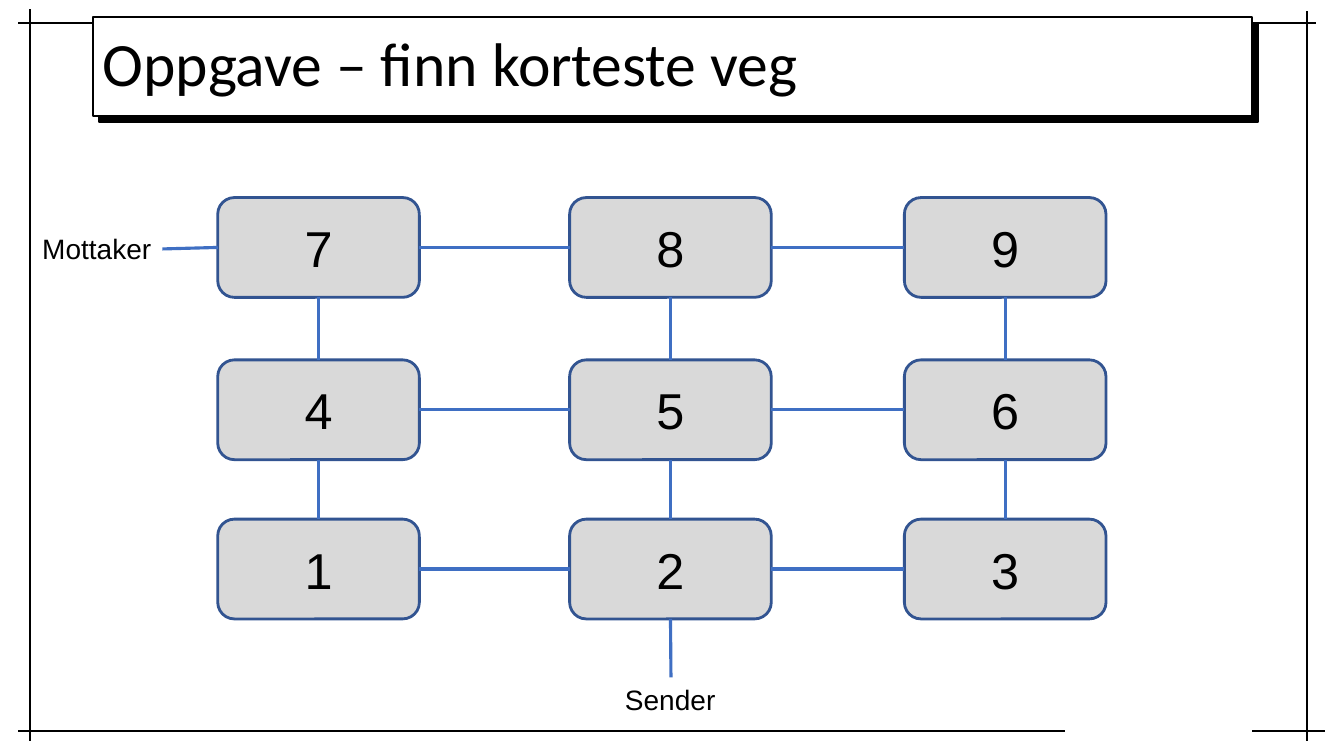
from lxml.etree import SubElement
from pptx import Presentation
from pptx.dml.color import RGBColor
from pptx.enum.shapes import MSO_CONNECTOR as Connector, MSO_SHAPE as Shape
from pptx.enum.text import MSO_ANCHOR as Anchor, MSO_AUTO_SIZE as AutoSize, PP_ALIGN as Align
from pptx.oxml.ns import qn
from pptx.util import Emu, Inches, Pt

COLORS = {
    "black": "000000",
    "white": "FFFFFF",
    "node": "D9D9D9",
    "node_edge": "325491",
    "link": "3F6FC3",
}
TOP, LEFT, BOTTOM, RIGHT = range(4)

# Node grid
COLUMNS = (2.16, 5.65, 8.97)
ROWS = (1.96, 3.57, 5.15)
NODE_SIZE = (2, 0.99)

# Frame lines: x1, y1, x2, y2
FRAME = (
    (0.18, 0.23, 13.05, 0.23),
    (0.18, 7.25, 10.56, 7.25),
    (0.3, 7.35, 0.3, 0.09),
    (12.96, 7.35, 12.96, 0.11),
    (12.42, 7.25, 13.14, 7.25),
)


def color(name):
    return RGBColor.from_string(COLORS[name])


def write(shape, text, size, font="Arial", **paragraph_format):
    para = shape.text_frame.paragraphs[0]
    for name, value in paragraph_format.items():
        setattr(para, name, value)
    span = para.add_run()
    span.text = text
    for name, value in {"name": font, "size": Pt(size)}.items():
        setattr(span.font, name, value)
    span.font.color.rgb = color("black")


def add_box(page, kind, area, fill, edge, width):
    box = page.shapes.add_shape(kind, *map(Inches, area))
    box.shadow.inherit = False
    box.fill.solid()
    box.fill.fore_color.rgb = color(fill)
    box.line.color.rgb = color(edge)
    box.line.width = Pt(width)
    box.text_frame.word_wrap = True
    box.text_frame.vertical_anchor = Anchor.MIDDLE
    return box


def add_line(page, points, name, width):
    line = page.shapes.add_connector(Connector.STRAIGHT, *map(Inches, points))
    line.line.color.rgb = color(name)
    line.line.width = Pt(width)
    SubElement(line._element.spPr, qn("a:effectLst"))
    return line


def join(page, start, start_side, end, end_side):
    line = add_line(page, (0, 0, 0, 0), "link", 2.25)
    line.begin_connect(start, start_side)
    line.end_connect(end, end_side)


def add_title(page, text):
    box = add_box(page, Shape.RECTANGLE, (0.92, 0.17, 11.5, 0.98), "white", "black", 1.5)
    write(box, text, 44, "Calibri", alignment=Align.LEFT, line_spacing=0.9)
    # Hard shadow down to the right
    effects = box._element.spPr.find(qn("a:effectLst"))
    shadow = SubElement(effects, qn("a:outerShdw"), blurRad="0", dist=str(Pt(6)),
                        dir=str(45 * 60000), algn="ctr", rotWithShape="0")
    SubElement(shadow, qn("a:srgbClr"), val=COLORS["black"])


def add_node(page, left, top, number):
    node = add_box(page, Shape.ROUNDED_RECTANGLE, (left, top, *NODE_SIZE),
                   "node", "node_edge", 2)
    write(node, str(number), 36, alignment=Align.CENTER)
    return node


def add_label(page, text, area):
    label = page.shapes.add_textbox(*map(Inches, area))
    label.text_frame.word_wrap = False
    label.text_frame.auto_size = AutoSize.SHAPE_TO_FIT_TEXT
    write(label, text, 20)
    return label


def add_network(page):
    # Numbers rise from the bottom row upwards
    grid = [[add_node(page, left, top, 7 - 3 * row + column)
             for column, left in enumerate(COLUMNS)]
            for row, top in enumerate(ROWS)]

    # Links between neighbours
    for nodes in grid:
        for node, neighbour in zip(nodes, nodes[1:]):
            join(page, node, RIGHT, neighbour, LEFT)
    for upper, lower in zip(grid, grid[1:]):
        for node, below in zip(upper, lower):
            join(page, below, TOP, node, BOTTOM)

    # End points of the route
    sender = add_label(page, "Sender", (6.1, 6.72, 1.11, 0.44))
    receiver = add_label(page, "Mottaker", (0.32, 2.25, 1.29, 0.44))
    join(page, sender, TOP, grid[2][1], BOTTOM)
    join(page, grid[0][0], LEFT, receiver, RIGHT)


def main():
    deck = Presentation()
    deck.slide_width, deck.slide_height = Inches(13.33), Inches(7.5)
    page = deck.slides.add_slide(deck.slide_layouts[6])
    page.background.fill.solid()
    page.background.fill.fore_color.rgb = color("white")

    for points in FRAME:
        add_line(page, points, "black", 1.5)
    add_title(page, "Oppgave – finn korteste veg")
    add_network(page)
    deck.save("out.pptx")


if __name__ == "__main__":
    main()
